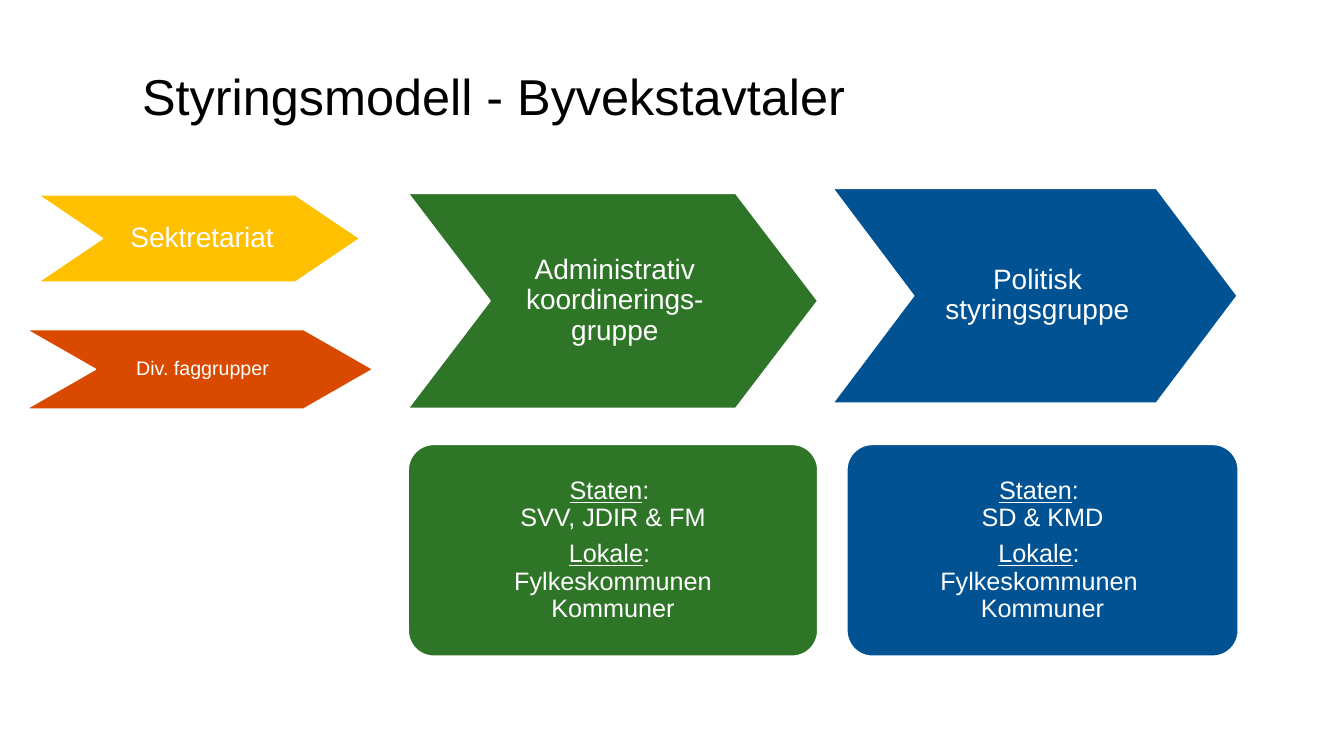
from dataclasses import dataclass

from pptx import Presentation
from pptx import util as u
from pptx.dml.color import RGBColor
from pptx.enum import shapes, text


@dataclass(frozen=True)
class Theme:
    font: str = "Arial"
    ink: str = "000000"
    white: str = "FFFFFF"
    green: str = "2F7528"
    blue: str = "005293"
    yellow: str = "FFC000"
    orange: str = "D94A00"
    title: int = 36
    step: int = 20
    members: int = 18
    small: int = 14


THEME = Theme()
WIDTH, HEIGHT = u.Inches(13.33), u.Inches(7.5)


def share(x, y, w, h):
    """Turn percentages of the slide into left, top, width, height."""
    return [round(part * side / 100)
            for part, side in zip((x, y, w, h), (WIDTH, HEIGHT) * 2)]


def set_font(p, size, color):
    p.font.name = THEME.font
    p.font.size = u.Pt(size)
    p.font.color.rgb = RGBColor.from_string(color)


def set_frame(tf, left, right, vertical):
    tf.word_wrap = True
    tf.vertical_anchor = text.MSO_ANCHOR.MIDDLE
    tf.margin_left, tf.margin_right = left, right
    tf.margin_top = tf.margin_bottom = vertical


def set_centred(p, size):
    p.alignment = text.PP_ALIGN.CENTER
    p.line_spacing = 0.9
    set_font(p, size, THEME.white)


def add_block(slide, kind, box, color, adjustment):
    sp = slide.shapes.add_shape(kind, *box)
    sp.shadow.inherit = False
    sp.adjustments[0] = adjustment
    sp.fill.solid()
    sp.fill.fore_color.rgb = RGBColor.from_string(color)
    sp.line.color.rgb = RGBColor.from_string(THEME.white)
    sp.line.width = u.Pt(1)
    return sp


def add_title(slide, box, wording):
    tf = slide.shapes.add_textbox(*box).text_frame
    set_frame(tf, u.Inches(0.1), u.Inches(0.1), u.Inches(0.05))
    p = tf.paragraphs[0]
    p.text = wording
    set_font(p, THEME.title, THEME.ink)


def add_step(slide, box, color, wording, size):
    """Chevron whose point takes a fifth of its width."""
    width, height = box[2:]
    point = 0.2 * width
    sp = add_block(slide, shapes.MSO_SHAPE.CHEVRON, box, color, point / height)
    tf = sp.text_frame
    left, right = (max(0, round(u.Inches(inset) - point)) for inset in (0.85, 0.79))
    set_frame(tf, left, right, u.Inches(0.03))
    p = tf.paragraphs[0]
    p.text = wording
    set_centred(p, size)


def add_members(slide, box, color, groups):
    """Rounded card with an underlined heading above each group's members."""
    sp = add_block(slide, shapes.MSO_SHAPE.ROUNDED_RECTANGLE, box, color, 0.12)
    tf = sp.text_frame
    set_frame(tf, *[u.Inches(0.06)] * 3)
    for i, (heading, lines) in enumerate(groups):
        p = tf.paragraphs[0] if i == 0 else tf.add_paragraph()
        set_centred(p, THEME.members)
        if i:
            p.space_before = u.Pt(0.35 * THEME.members)
        r = p.add_run()
        r.text = heading
        r.font.underline = True
        p.add_run().text = ": "
        for line in lines:
            p.add_line_break()
            p.add_run().text = line


def build_slide(prs):
    slide = prs.slides.add_slide(prs.slide_layouts[6])
    add_title(slide, share(9.83, 4.27, 80.35, 16.7), "Styringsmodell - Byvekstavtaler")

    # Decision steps
    steps = [
        ((30.38, 25.6, 30.46, 28.4), THEME.green,
         "Administrativ koordinerings-gruppe", THEME.step),
        ((61.97, 24.93, 30.08, 28.4), THEME.blue, "Politisk styringsgruppe", THEME.step),
        ((2.85, 25.8, 23.93, 11.5), THEME.yellow, "Sektretariat", THEME.step),
        ((1.95, 43.6, 25.81, 10.5), THEME.orange, "Div. faggrupper", THEME.small),
    ]
    for box, color, wording, size in steps:
        add_step(slide, share(*box), color, wording, size)

    # Members of each group
    cards = [
        ((30.38, 58.8, 30.46, 28), THEME.green, "SVV, JDIR & FM", "Fylkeskommunen"),
        ((63.02, 58.8, 29.11, 28), THEME.blue, "SD & KMD", "Fylkeskommunen "),
    ]
    for box, color, state, county in cards:
        add_members(slide, share(*box), color,
                    [("Staten", [state]), ("Lokale", [county, "Kommuner"])])


def main():
    prs = Presentation()
    prs.slide_width, prs.slide_height = WIDTH, HEIGHT
    build_slide(prs)
    prs.save("out.pptx")


if __name__ == "__main__":
    main()
